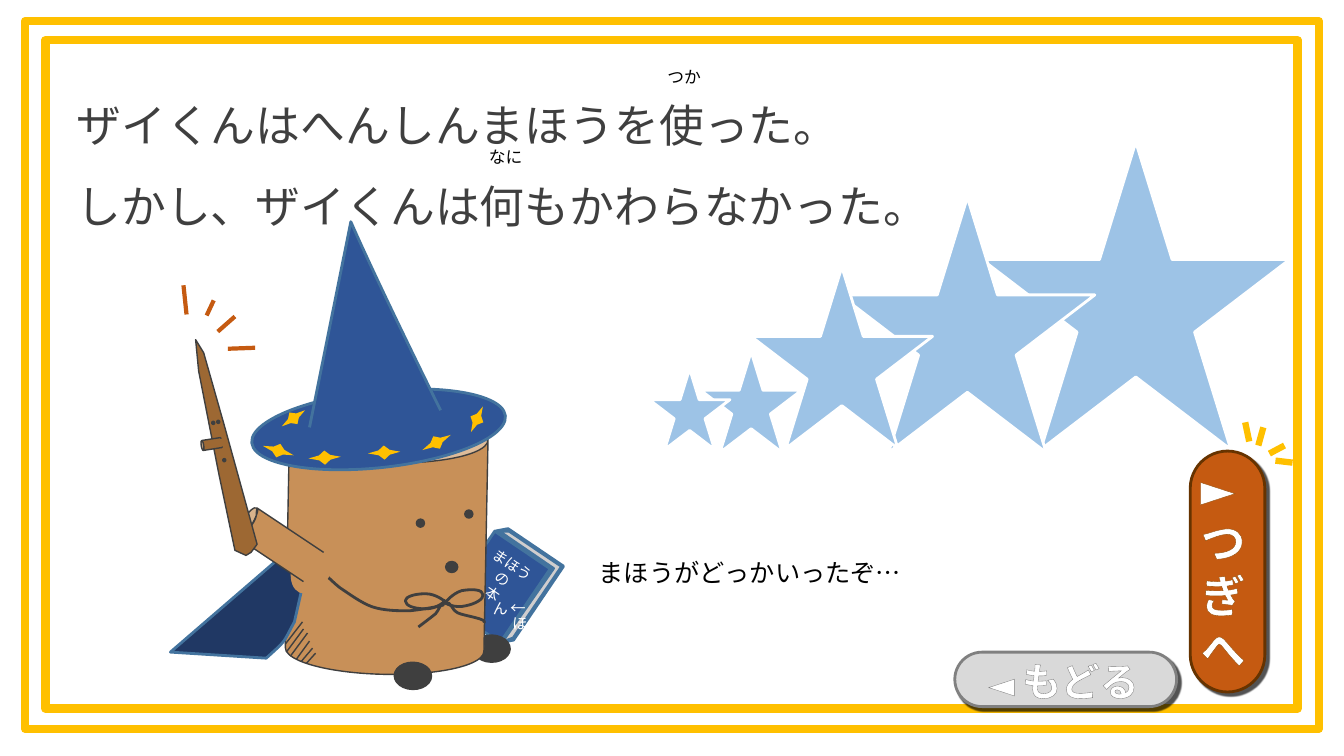
from dataclasses import dataclass
from functools import singledispatch

from lxml.etree import SubElement
from pptx import Presentation
from pptx.dml.color import RGBColor
from pptx.enum.lang import MSO_LANGUAGE_ID as Lang
from pptx.enum.shapes import MSO_CONNECTOR as Link, MSO_SHAPE as Kind
from pptx.enum.text import MSO_ANCHOR as Anchor, MSO_AUTO_SIZE as Fit, PP_ALIGN as Align
from pptx.oxml.ns import qn
from pptx.shapes.shapetree import SlideShapes as Shapes
from pptx.util import Inches, Pt

WHITE = RGBColor(0xFF, 0xFF, 0xFF)
BLACK = RGBColor(0, 0, 0)
INK = RGBColor(0x3F, 0x3F, 0x3F)
GOLD = RGBColor(0xFF, 0xC0, 0x00)
SKY = RGBColor(0x9D, 0xC3, 0xE6)
BLUE = RGBColor(0x2F, 0x55, 0x97)
EDGE = RGBColor(0x43, 0x73, 0x9E)
NAVY = RGBColor(0x20, 0x38, 0x64)
PAPER = RGBColor(0xD0, 0xCE, 0xCE)
TAN = RGBColor(0xC8, 0x90, 0x58)
CUFF = RGBColor(0xD9, 0xB3, 0x8B)
WOOD = RGBColor(0x9D, 0x68, 0x33)
RUST = RGBColor(0xC5, 0x5A, 0x11)
BROWN = RGBColor(0x66, 0x33, 0x00)
UMBER = RGBColor(0x8E, 0x47, 0x00)
SILVER = RGBColor(0xD9, 0xD9, 0xD9)
GRAY = RGBColor(0x80, 0x80, 0x80)
NOTO = "Noto Sans CJK JP"


@dataclass
class Form:
    kind: Kind
    box: tuple[float, ...]
    fill: RGBColor | None = None
    line: RGBColor | None = None
    width: float = 1
    turn: float = 0
    adjust: float | None = None
    shade: bool = False


@dataclass
class Curve:
    start: tuple[float, float]
    steps: list[tuple[float, ...]]
    fill: RGBColor | None = None
    line: RGBColor | None = None
    width: float = 1
    close: bool = False


@dataclass
class Stroke:
    ends: tuple[float, float, float, float]
    color: RGBColor
    width: float


@dataclass
class Label:
    box: tuple[float, ...]
    lines: list[str]
    size: float
    color: RGBColor
    font: str = "Arial"
    align: Align | None = None
    space: tuple[float, ...] = ()
    turn: float = 0
    flow: str = "horz"
    rim: RGBColor | None = None
    lead: tuple[str, float] | None = None


def paint(shape, item: Form | Curve) -> None:
    shape.shadow.inherit = False
    if item.fill is None:
        shape.fill.background()
    else:
        shape.fill.solid()
        shape.fill.fore_color.rgb = item.fill
    if item.line is None:
        shape.line.fill.background()
    else:
        shape.line.color.rgb = item.line
        shape.line.width = Pt(item.width)


@singledispatch
def draw(item, shapes: Shapes) -> None:
    raise TypeError(item)


@draw.register
def _(item: Form, shapes: Shapes) -> None:
    shape = shapes.add_shape(item.kind, *map(Inches, item.box))
    shape.rotation = item.turn
    if item.adjust is not None:
        shape.adjustments[0] = item.adjust
    paint(shape, item)
    if item.shade:
        effect = shape._element.spPr.find(qn("a:effectLst"))
        cast = SubElement(effect, qn("a:outerShdw"), blurRad=str(Pt(1)),
                          dist=str(Pt(3)), dir=str(50 * 60000), rotWithShape="0")
        tint = SubElement(cast, qn("a:srgbClr"), val=str(BLACK))
        SubElement(tint, qn("a:alpha"), val="68000")


@draw.register
def _(item: Curve, shapes: Shapes) -> None:
    spots = [(Inches(s[i]), Inches(s[i + 1])) for s in item.steps for i in range(0, len(s), 2)]
    pen = shapes.build_freeform(*map(Inches, item.start))
    pen.add_line_segments(spots, close=item.close)
    shape = pen.convert_to_shape()
    paint(shape, item)
    legs = iter(list(shape._element.iter(qn("a:lnTo"))))
    for step in item.steps:
        leg = next(legs)
        if len(step) == 6:
            bend = leg.makeelement(qn("a:cubicBezTo"))
            leg.addprevious(bend)
            for part in (leg, next(legs), next(legs)):
                bend.append(part[0])
                part.getparent().remove(part)


@draw.register
def _(item: Stroke, shapes: Shapes) -> None:
    link = shapes.add_connector(Link.STRAIGHT, *map(Inches, item.ends))
    link.line.color.rgb = item.color
    link.line.width = Pt(item.width)
    SubElement(link._element.spPr, qn("a:effectLst"))


@draw.register
def _(item: Label, shapes: Shapes) -> None:
    box = shapes.add_textbox(*map(Inches, item.box))
    box.rotation = item.turn
    frame = box.text_frame
    frame.word_wrap = True
    frame.auto_size = Fit.SHAPE_TO_FIT_TEXT
    frame._txBody.bodyPr.set("vert", item.flow)
    if item.flow == "wordArtVertRtl":
        frame.vertical_anchor = Anchor.MIDDLE
    frame.text = "\n".join(item.lines)
    for i, para in enumerate(frame.paragraphs):
        para.alignment = item.align
        if item.space:
            para.line_spacing = item.space[i]
        font = para.font
        font.name, font.size, font.bold = item.font, Pt(item.size), item.rim is not None
        font.color.rgb = item.color
        font.language_id = Lang.JAPANESE
        if item.lead:
            run = para.add_run()
            run.text, run.font.size = item.lead[0], Pt(item.lead[1])
        for run in para.runs:
            if item.rim:
                rim = run._r.get_or_add_rPr().makeelement(qn("a:ln"), w=str(Pt(1)))
                run._r.rPr.insert(0, rim)
                SubElement(SubElement(rim, qn("a:solidFill")), qn("a:srgbClr"), val=str(item.rim))


STARS = [Form(Kind.STAR_5_POINT, (x, y, s, s), SKY, WHITE, 2) for x, y, s in (
    (9.74, 1.41, 3.05), (8.33, 1.96, 2.53), (7.45, 2.65, 1.8), (6.95, 3.49, 1), (6.44, 3.66, 0.8))]
BOOK = [
    Form(Kind.CUBE, (4.62, 5.32, 0.76, 0.98), BLUE, EDGE, 2, 34.1, 0.125),
    Label((4.62, 5.43, 0.71, 0.67), ["まほう", "の", "本"], 10.5, WHITE, align=Align.CENTER, turn=34.1),
    Curve((5.05, 5.27), [(4.95, 5.27), (5.49, 5.64), (4.98, 6.37), (5.09, 6.33), (5.57, 5.62)],
          PAPER, EDGE, 2, True)]
FRAME = [Form(Kind.RECTANGLE, box, None, GOLD, 6) for box in (
    (0.25, 0.21, 12.83, 7.02), (0.45, 0.4, 12.42, 6.63))]
STORY = [Label((0.66, 0.39, 11.54, 1.99),
               ["ザイくんはへんしんまほうを使った。", "しかし、ザイくんは何もかわらなかった。"],
               32, INK, space=(2.0, 1.5))]
FOOT, *DOTS = [Form(Kind.OVAL, box, INK, INK, turn=1.1) for box in (
    (4.69, 6.3, 0.37, 0.27), (4.13, 5.15, 0.08, 0.08), (4.61, 5.06, 0.08, 0.08),
    (4.42, 5.57, 0.12, 0.11), (3.91, 6.57, 0.37, 0.27))]
BODY = [FOOT, Form(Kind.CAN, (2.85, 4.1, 1.97, 2.59), TAN, INK, 1, 1.1, 0.25), *DOTS]
HATCH = [Stroke(ends, INK, 1) for ends in (
    (3, 6.17, 2.83, 6.39), (3.01, 6.24, 2.84, 6.47), (3.05, 6.28, 2.88, 6.51),
    (3.07, 6.36, 2.94, 6.54), (3.1, 6.43, 2.99, 6.56), (3.13, 6.48, 3.04, 6.58))]
SPARKS = [Stroke(ends, RUST, 3) for ends in (
    (2.33, 3.14, 2.16, 3.29), (2.53, 3.45, 2.26, 3.46),
    (1.82, 2.83, 1.85, 3.12), (2.12, 2.98, 2.05, 3.13))]
SPEECH = [Label((5.84, 5.48, 3.53, 0.4), ["まほうがどっかいったぞ…"], 18, BLACK)]
HAT = [
    Form(Kind.OVAL, (2.49, 3.88, 2.53, 0.76), BLUE, EDGE, 2, 353.9),
    Curve((3.07, 4.24), [(3.48, 2.2), (3.76, 2.84, 4.37, 4.07, 4.37, 4.07)], BLUE, EDGE, 2)]
GEMS = [Form(Kind.STAR_4_POINT, (x, y, 0.14, h), GOLD, turn=turn, adjust=0.246) for x, y, h, turn in (
    (4.26, 4.23, 0.32, 62), (4.66, 4.02, 0.28, 25), (3.74, 4.33, 0.32, 86.9),
    (3.15, 4.38, 0.32, 86.9), (2.69, 4.31, 0.32, 107), (2.84, 4.01, 0.28, 55.3))]
BOW = [Curve(start, steps, None, INK, 2, close) for start, steps, close in (
    ((4.02, 5.96), [(4.02, 5.92, 4.11, 5.89, 4.22, 5.89), (4.33, 5.89, 4.41, 5.97, 4.41, 5.96),
                    (4.41, 5.97, 4.33, 6.04, 4.22, 6.04), (4.11, 6.04, 4.02, 6.01, 4.02, 5.96)], True),
    ((4.79, 5.9), [(4.8, 5.94, 4.72, 5.99, 4.62, 6.01), (4.51, 6.04, 4.41, 5.98, 4.41, 5.98),
                   (4.42, 5.98, 4.48, 5.89, 4.58, 5.86), (4.69, 5.84, 4.79, 5.85, 4.79, 5.9)], True),
    ((4.15, 6.22), [(4.15, 6.22, 4.27, 6.13, 4.32, 6.09), (4.36, 6.05, 4.36, 5.98, 4.42, 5.98),
                    (4.48, 5.97, 4.47, 6.04, 4.54, 6.08), (4.6, 6.11, 4.85, 6.14, 4.8, 6.18)], False),
    ((3.13, 5.61), [(3.13, 5.6, 3.28, 5.76, 3.37, 5.83), (3.46, 5.89, 3.58, 5.98, 3.69, 6.02),
                    (3.81, 6.06, 3.95, 6.06, 4.06, 6.06), (4.18, 6.05, 4.45, 6, 4.39, 6)], False))]
CAPE = [Curve((2.86, 5.46), [(1.69, 6.47), (2.64, 6.53), (2.85, 6.34, 2.8, 6.39, 2.92, 6.17),
                             (3.08, 5.46)], NAVY, EDGE, 2, True)]
INNER = [(2.57, 5.06, 2.54, 5.13, 2.49, 5.22), (2.44, 5.3, 2.37, 5.35, 2.35, 5.33)]
OUTER = (2.33, 5.32, 2.35, 5.24, 2.41, 5.16), (2.46, 5.08, 2.52, 5.02, 2.55, 5.04)
SLEEVE = [
    Form(Kind.OVAL, (2.8, 5.41, 0.61, 0.39), TAN, turn=296.8),
    Curve((2.35, 5.33), [(2.37, 5.35, 2.44, 5.3, 2.49, 5.22), (2.54, 5.13, 2.57, 5.06, 2.55, 5.04),
                         (3.21, 5.48), (3.23, 5.49, 3.2, 5.57, 3.15, 5.65),
                         (3.1, 5.73, 3.03, 5.79, 3.01, 5.77)], TAN, close=True),
    Curve((2.35, 5.33), [*OUTER, *INNER], CUFF, close=True),
    Curve((3.01, 5.77), [(2.35, 5.33), (2.38, 5.28, 2.39, 5.36, 2.49, 5.22),
                         (2.57, 5.11, 2.53, 5.1, 2.55, 5.04), *INNER, *OUTER, (3.21, 5.48)], None, INK)]
WAND = [
    Curve((1.94, 3.37), [(1.97, 3.68), (2.17, 4.7), (2.33, 5.46), (2.44, 5.51), (2.49, 5.48),
                         (2.55, 5.4), (2.23, 4.24), (2.02, 3.5)], WOOD, INK, 1, True),
    Form(Kind.CAN, (2.05, 4.3, 0.1, 0.21), WOOD, INK, 1, 261.1, 0.25),
    Form(Kind.OVAL, (2.15, 4.35, 0.11, 0.08), WOOD, turn=341.4),
    *(Form(Kind.OVAL, (x, y, 0.03, 0.03), INK, INK, turn=294.5)
      for x, y in ((2.21, 4.55), (2.1, 4.18), (2.15, 4.17)))]
RUBY = [
    Label((6.52, 0.61, 0.92, 0.3), ["つか"], 12, BLACK),
    Label((4.75, 1.41, 0.92, 0.3), ["なに"], 12, BLACK),
    Label((4.89, 5.86, 0.39, 0.51), ["↓ほん"], 11, WHITE, flow="eaVert")]
NEXT = [
    Form(Kind.ROUNDED_RECTANGLE, (10.98, 5.3, 2.39, 0.74), RUST, BROWN, 2, 270, 0.5, True),
    Label((11.81, 4.44, 0.73, 2.39), ["►つぎへ"], 32, WHITE, NOTO, flow="wordArtVertRtl", rim=UMBER),
    *(Stroke(ends, GOLD, 4.5) for ends in (
        (12.35, 4.19, 12.39, 4.38), (12.53, 4.24, 12.48, 4.42),
        (12.82, 4.59, 12.65, 4.57), (12.74, 4.42, 12.59, 4.5)))]
BACK = [
    Form(Kind.ROUNDED_RECTANGLE, (9.47, 6.47, 2.2, 0.54), SILVER, GRAY, 2, 0, 0.5, True),
    Label((9.45, 6.47, 2.2, 0.57), ["◄ "], 24, WHITE, NOTO, Align.CENTER, rim=GRAY, lead=("もどる", 28))]


def main() -> None:
    deck = Presentation()
    deck.slide_width, deck.slide_height = Inches(13.33), Inches(7.5)
    shapes = deck.slides.add_slide(deck.slide_layouts[6]).shapes
    for part in (STARS, BOOK, FRAME, STORY, BODY, HATCH, SPARKS, SPEECH, HAT, GEMS,
                 BOW, CAPE, SLEEVE, WAND, RUBY, NEXT, BACK):
        for item in part:
            draw(item, shapes)
    deck.save("out.pptx")


if __name__ == "__main__":
    main()
